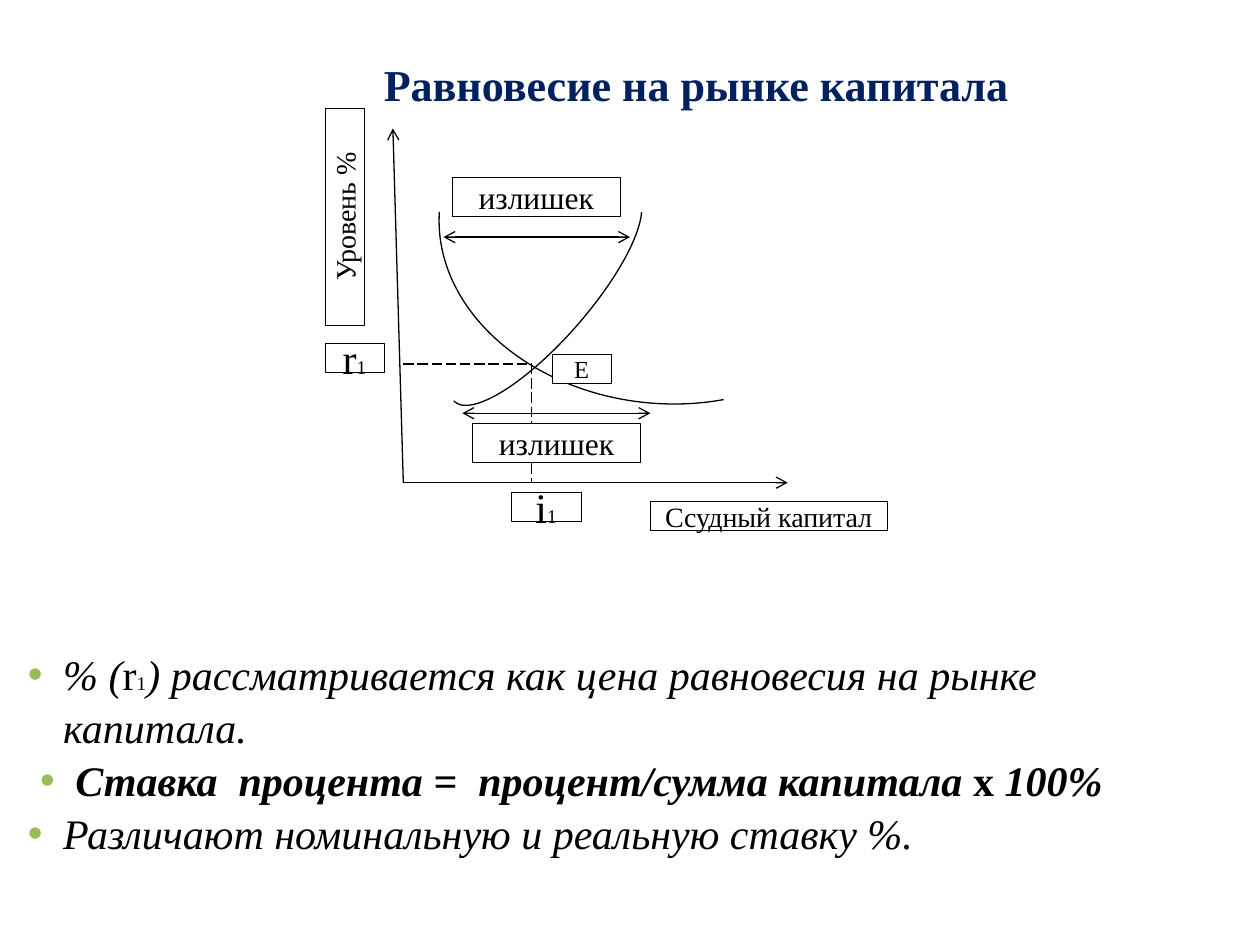
from pptx import Presentation
from pptx.dml.color import RGBColor
from pptx.enum.dml import MSO_LINE_DASH_STYLE as Dash
from pptx.enum.shapes import MSO_CONNECTOR, MSO_SHAPE
from pptx.enum.text import MSO_ANCHOR, MSO_AUTO_SIZE, PP_ALIGN
from pptx.oxml.ns import qn
from pptx.util import Cm, Pt
from lxml.etree import SubElement

FONT = "Times New Roman"
COLORS = {"title": "002060", "text": "000000", "line": "000000",
          "paper": "FFFFFF", "bullet": "9BBB59"}

TITLE = "Равновесие на рынке капитала"
BULLETS = [
    (PP_ALIGN.LEFT, [("% (", 24, "i"), ("r", 24, ""), ("1", 11, ""),
                     (") рассматривается как цена равновесия на рынке капитала.", 24, "i")]),
    (PP_ALIGN.CENTER, [("Ставка  процента =  процент/сумма капитала ", 24, "bi"),
                       ("х ", 24, "b"), ("100%", 24, "bi")]),
    (PP_ALIGN.LEFT, [("Различают номинальную и реальную ставку %.", 24, "i")]),
]

ORIGIN = (8.13, 9.73)
BALANCE = (10.72, 7.34)
AXES = [(ORIGIN, (7.92, 2.59)), (ORIGIN, (15.88, ORIGIN[1]))]
GUIDES = [((ORIGIN[0], BALANCE[1]), BALANCE), (BALANCE, (BALANCE[0], ORIGIN[1]))]
GAPS = [((8.94, 4.78), (12.7, 4.78)), ((9.32, 8.33), (13.11, 8.33))]
CURVES = [((10.16, 3.23, 1.68, 5.56), 41.2, (166.19, 54.35)),
          ((8.84, 1.17, 8.99, 6.96), 186.3, (146.1, 215.13))]
LABELS = [
    ((6.55, 6.93, 1.19, 0.58), [("r", 24, ""), ("1", 11, "")], False),
    ((10.31, 9.93, 1.4, 0.58), [("i", 24, ""), ("1", 11, "")], False),
    ((9.12, 3.58, 3.38, 0.79), [("излишек", 18, "")], False),
    ((11.13, 7.14, 1.19, 0.58), [("Е", 14, "")], False),
    ((6.55, 2.18, 0.79, 4.37), [("Уровень %", 16, "")], True),
    ((13.11, 10.11, 4.78, 0.58), [("Ссудный капитал", 16, "")], False),
    ((9.53, 8.53, 3.38, 0.79), [("излишек", 18, "")], False),
]


def rgb(name):
    return RGBColor.from_string(COLORS[name])


def add_runs(p, runs, color="text"):
    for text, size, style in runs:
        r = p.add_run()
        r.text = text
        r.font.name = FONT
        r.font.size = Pt(size)
        r.font.bold = "b" in style
        r.font.italic = "i" in style
        r.font.color.rgb = rgb(color)


def place(sp, box):
    sp.left, sp.top, sp.width, sp.height = map(Cm, box)


def paint(sp, width):
    sp.line.color.rgb = rgb("line")
    sp.line.width = Pt(width)


def add_line(s, ends, arrows=(), dash=None):
    (x1, y1), (x2, y2) = ends
    sp = s.shapes.add_connector(MSO_CONNECTOR.STRAIGHT, Cm(x1), Cm(y1), Cm(x2), Cm(y2))
    paint(sp, 0.75)
    if dash:
        sp.line.dash_style = dash
    for end in arrows:
        SubElement(sp.line._get_or_add_ln(), qn(f"a:{end}"), type="arrow")
    SubElement(sp._element.spPr, qn("a:effectLst"))


def add_curve(s, box, angle, adjustments):
    sp = s.shapes.add_shape(MSO_SHAPE.ARC, *map(Cm, box))
    sp.rotation = angle
    for i, value in enumerate(adjustments):
        sp.adjustments[i] = value
    sp.shadow.inherit = False
    sp.fill.background()
    paint(sp, 0.75)


def add_label(s, box, runs, vertical):
    sp = s.shapes.add_shape(MSO_SHAPE.RECTANGLE, *map(Cm, box))
    sp.shadow.inherit = False
    sp.fill.solid()
    sp.fill.fore_color.rgb = rgb("paper")
    paint(sp, 0.25)
    tf = sp.text_frame
    tf.word_wrap = True
    tf.vertical_anchor = MSO_ANCHOR.MIDDLE
    if vertical:
        tf._txBody.bodyPr.set("vert", "vert270")
    p = tf.paragraphs[0]
    p.alignment = PP_ALIGN.CENTER
    add_runs(p, runs)


def fill_title(sp):
    place(sp, (2.67, 1.19, 22.73, 0.99))
    tf = sp.text_frame
    tf.auto_size = MSO_AUTO_SIZE.NONE
    tf.vertical_anchor = MSO_ANCHOR.MIDDLE
    p = tf.paragraphs[0]
    p.alignment = PP_ALIGN.CENTER
    add_runs(p, [(TITLE, 25.2, "b")], "title")


def fill_body(sp):
    place(sp, (0, 12.9, 22.73, 4.29))
    tf = sp.text_frame
    tf.auto_size = MSO_AUTO_SIZE.NONE
    for i, (align, runs) in enumerate(BULLETS):
        p = tf.add_paragraph() if i else tf.paragraphs[0]
        p.alignment = align
        p.line_spacing = 1.05
        p.space_before = Pt(0)
        pPr = p._p.get_or_add_pPr()
        pPr.set("marL", str(Cm(1.02)))
        pPr.set("indent", str(Cm(-0.71)))
        clr = SubElement(pPr, qn("a:buClr"))
        SubElement(clr, qn("a:srgbClr"), val=COLORS["bullet"])
        SubElement(pPr, qn("a:buChar"), char="•")
        add_runs(p, runs)


def main():
    prs = Presentation()
    prs.slide_width, prs.slide_height = Cm(25.4), Cm(19.05)
    s = prs.slides.add_slide(prs.slide_layouts[1])
    fill_title(s.shapes.title)
    fill_body(s.placeholders[1])
    for ends in AXES:
        add_line(s, ends, ["tailEnd"])
    for curve in CURVES:
        add_curve(s, *curve)
    for ends in GUIDES:
        add_line(s, ends, dash=Dash.LONG_DASH)
    for ends in GAPS:
        add_line(s, ends, ["headEnd", "tailEnd"])
    for label in LABELS:
        add_label(s, *label)
    prs.save("out.pptx")


if __name__ == "__main__":
    main()
